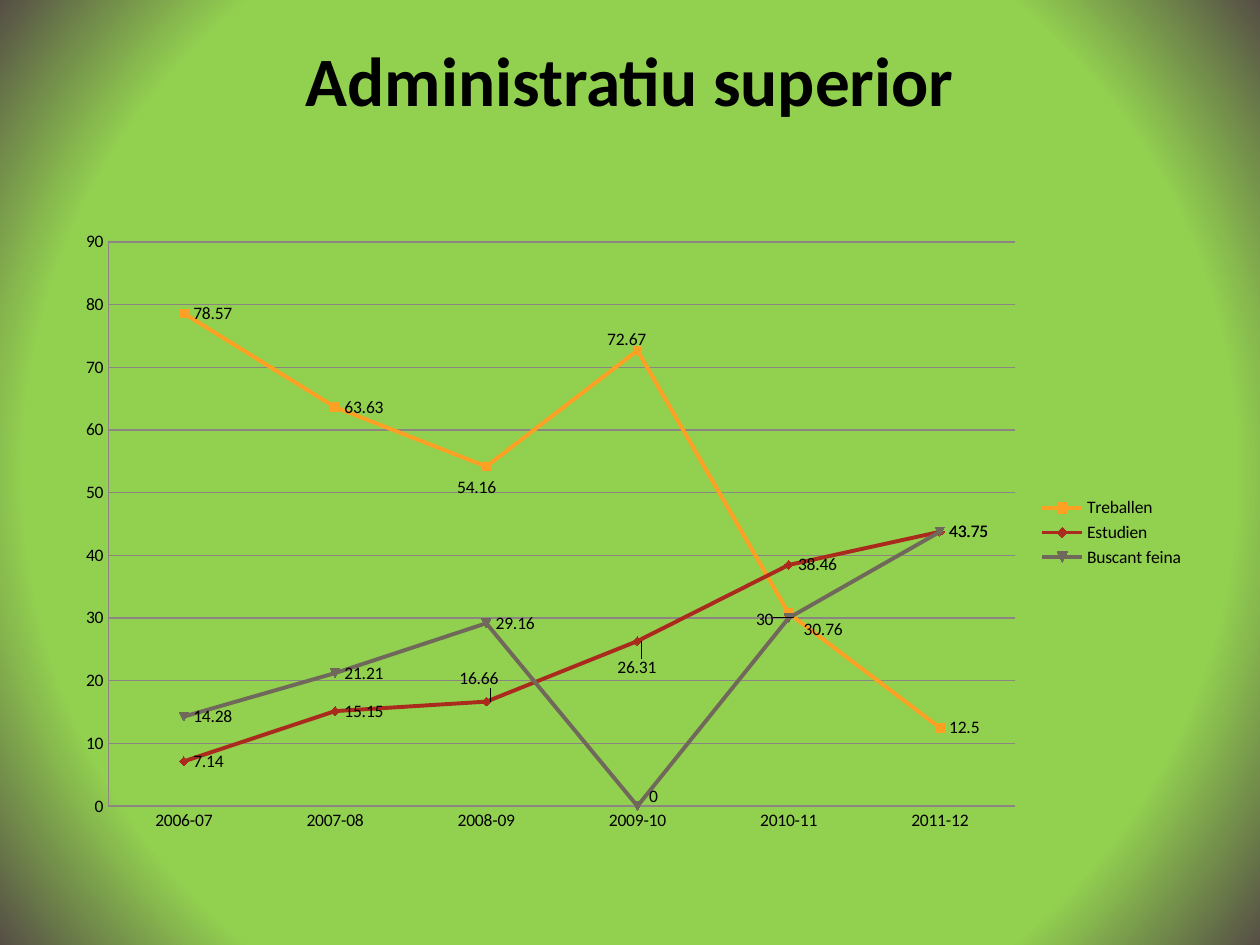
"""Build a slide with a line chart of graduate outcomes by school year."""
import pptx
import pptx.chart.data
import pptx.dml.color
import pptx.enum.chart
import pptx.enum.text
import pptx.oxml
import pptx.util

Cm, Pt = pptx.util.Cm, pptx.util.Pt
XL = pptx.enum.chart
NS = ('xmlns:a="http://schemas.openxmlformats.org/drawingml/2006/main" '
      'xmlns:c="http://schemas.openxmlformats.org/drawingml/2006/chart"')

YEARS = ["2006-07", "2007-08", "2008-09", "2009-10", "2010-11", "2011-12"]
SERIES = [
    ("Treballen", "FDA023", [78.57, 63.63, 54.16, 72.67, 30.76, 12.5],
     {2: (-0.034, 0.034), 3: (-0.035, -0.018), 4: (0.005, 0.026)}),
    ("Estudien", "AA2B1E", [7.14, 15.15, 16.66, 26.31, 38.46, 43.75],
     {2: (-0.032, -0.037), 3: (-0.026, 0.043)}),
    ("Buscant feina", "71685C", [14.28, 21.21, 29.16, 0, 30, 43.75],
     {3: (0.002, -0.016), 4: (-0.037, 0.003)}),
]


def rgb(value):
    return pptx.dml.color.RGBColor.from_string(value)


def apply(obj, values):
    for name, value in values.items():
        setattr(obj, name, value)


def layout(x, y, extra=""):
    return pptx.oxml.parse_xml(
        f'<c:layout {NS}><c:manualLayout>{extra}<c:x val="{x}"/><c:y val="{y}"/>'
        '</c:manualLayout></c:layout>')


class Deck:
    def __init__(self, slide, font, ink, rule):
        self.slide, self.font, self.ink, self.rule = slide, font, ink, rule

    def style(self, font, size, bold=False):
        apply(font, {"name": self.font, "size": Pt(size), "bold": bold})
        font.color.rgb = rgb(self.ink)

    def background(self, inner, outer):
        fill = self.slide.background.fill
        fill.gradient()
        for stop, color, position in zip(fill.gradient_stops, (inner, outer), (0.77, 1)):
            stop.color.rgb = rgb(color)
            stop.position = position
        grad = self.slide.background._cSld.xpath(".//a:gradFill")[0]
        grad.replace(grad.xpath("a:lin")[0], pptx.oxml.parse_xml(
            f'<a:path {NS} path="circle"><a:fillToRect l="50000" t="50000" '
            'r="50000" b="50000"/></a:path>'))

    def title(self, text, box, size):
        sp = self.slide.shapes.add_textbox(*map(Cm, box))
        tf = sp.text_frame
        apply(tf, {"word_wrap": True, "margin_top": 0,
                   "vertical_anchor": pptx.enum.text.MSO_ANCHOR.TOP})
        p = tf.paragraphs[0]
        p.alignment = pptx.enum.text.PP_ALIGN.CENTER
        r = p.add_run()
        r.text = text
        self.style(r.font, size, True)

    def line(self, fmt, color, width):
        fmt.line.color.rgb = rgb(color)
        fmt.line.width = Pt(width)

    def chart(self, years, series, box, size):
        data = pptx.chart.data.CategoryChartData()
        data.categories = years
        for name, _, values, _ in series:
            data.add_series(name, values)
        chart = self.slide.shapes.add_chart(
            XL.XL_CHART_TYPE.LINE_MARKERS, *map(Cm, box), data).chart
        self.style(chart.font, size)
        apply(chart, {"has_title": False, "has_legend": True})
        apply(chart.legend, {"position": XL.XL_LEGEND_POSITION.RIGHT,
                             "include_in_layout": False})
        self.axes(chart)
        chart.plots[0].vary_by_categories = False
        for ser, (_, color, _, offsets) in zip(chart.plots[0].series, series):
            self.series(ser, color, offsets, size)
        area = chart._chartSpace.xpath("c:chart/c:plotArea")[0]
        for old in area.xpath("c:layout"):
            area.remove(old)
        frame = layout(0.04, 0.034, '<c:layoutTarget val="inner"/>'
                       '<c:xMode val="edge"/><c:yMode val="edge"/>')
        for tag, value in (("w", 0.8), ("h", 0.905)):
            frame[0].append(pptx.oxml.parse_xml(f'<c:{tag} {NS} val="{value}"/>'))
        area.insert(0, frame)

    def axes(self, chart):
        none = XL.XL_TICK_MARK.NONE
        for axis in (chart.category_axis, chart.value_axis):
            apply(axis, {"major_tick_mark": none, "minor_tick_mark": none})
            self.line(axis.format, self.rule, 0.75)
        apply(chart.value_axis, {"minimum_scale": 0, "maximum_scale": 90,
                                 "major_unit": 10, "has_major_gridlines": True})
        self.line(chart.value_axis.major_gridlines.format, self.rule, 0.75)

    def series(self, ser, color, offsets, size):
        ser.smooth = False
        self.line(ser.format, color, 2.25)
        ser.marker.format.fill.solid()
        ser.marker.format.fill.fore_color.rgb = rgb(color)
        self.line(ser.marker.format, color, 0.75)
        right = XL.XL_LABEL_POSITION.RIGHT
        apply(ser.data_labels, {"show_value": True, "position": right})
        self.style(ser.data_labels.font, size)
        for index, offset in offsets.items():
            label = ser.points[index].data_label
            self.style(label.font, size)
            label.position = right
            item = ser._element.xpath(f"c:dLbls/c:dLbl[c:idx/@val={index}]")[0]
            item.insert(1, layout(*offset))


def main():
    prs = pptx.Presentation()
    apply(prs, {"slide_width": Cm(25.4), "slide_height": Cm(19.05)})
    s = prs.slides.add_slide(prs.slide_layouts[6])
    deck = Deck(s, "Calibri", "000000", "8B8681")
    deck.background("92D050", "554E45")
    deck.title("Administratiu superior", (1.27, 0.76, 22.86, 3.18), 39.6)
    deck.chart(YEARS, SERIES, (1.27, 4.45, 22.86, 12.57), 10)
    prs.save("out.pptx")


if __name__ == "__main__":
    main()
